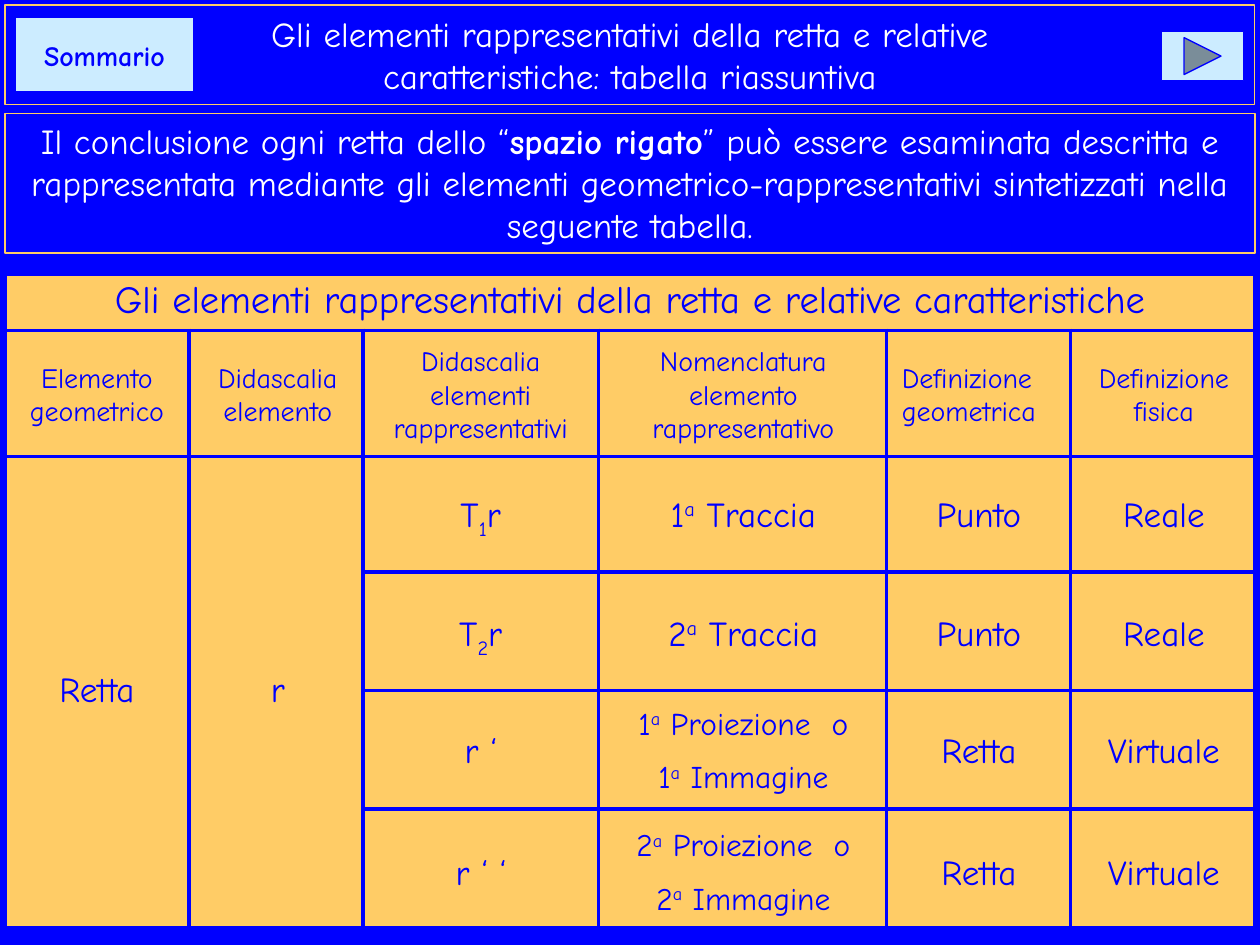
from dataclasses import dataclass
from typing import NamedTuple

import pptx
import pptx.dml.color
import pptx.enum.shapes
import pptx.enum.text
import pptx.oxml
import pptx.oxml.ns
import pptx.util

Pt = pptx.util.Pt
RGBColor = pptx.dml.color.RGBColor
MSO_SHAPE = pptx.enum.shapes.MSO_SHAPE
PP_ALIGN = pptx.enum.text.PP_ALIGN
MSO_ANCHOR = pptx.enum.text.MSO_ANCHOR
MSO_AUTO_SIZE = pptx.enum.text.MSO_AUTO_SIZE

BLUE = RGBColor(0x00, 0x00, 0xFF)
AMBER = RGBColor(0xFF, 0xCC, 0x66)
WHITE = RGBColor(0xFF, 0xFF, 0xFF)
PALE_BLUE = RGBColor(0xCC, 0xEC, 0xFF)
FONT = "Comic Neue"
LINE_HEIGHT = 1.2
INSETS = 7.2
SUPER, SUB = 30, -25


class Run(NamedTuple):
    text: str
    baseline: int = 0
    bold: bool = False


class Column(NamedTuple):
    left: float
    width: float


@dataclass
class Label:
    column: int
    middle: float
    paragraphs: list[list[Run]]
    size: float = 20
    lines: int = 1
    gap: float = 0
    align: PP_ALIGN = PP_ALIGN.CENTER


COLUMNS = [Column(4.3, 102.2), Column(110.5, 96.5), Column(209.5, 130.3),
           Column(345.6, 158.4), Column(508.3, 102.2), Column(614, 102.2)]
COLUMN_WIDTHS = [105.1, 99.4, 134.6, 164.5, 105.3, 105.3]
ROW_HEIGHTS = [31.7, 72, 66.2, 67.7, 67.7, 67.7]
HEADING_MIDDLE = 225.2
SPAN_MIDDLE = 393.5
ROW_MIDDLES = [293.4, 361.3, 428.4, 497.8]


def ordinal(number: str, noun: str) -> list[Run]:
    """Return the runs of a feminine ordinal followed by a noun."""
    return [Run(number), Run("a", SUPER), Run(f" {noun}")]


HEADINGS = [
    ([[Run("Elemento")], [Run("geometrico")]], 2),
    ([[Run("Didascalia elemento")]], 2),
    ([[Run("Didascalia elementi rappresentativi")]], 3),
    ([[Run("Nomenclatura elemento rappresentativo")]], 3),
    ([[Run("Definizione geometrica")]], 2),
    ([[Run("Definizione fisica")]], 2),
]
SYMBOLS = [[Run("T"), Run("1", SUB), Run("r")], [Run("T"), Run("2", SUB), Run("r")],
           [Run("r ‘")], [Run("r ‘ ‘")]]
GEOMETRIC = ["Punto", "Punto", "Retta", "Retta"]
PHYSICAL = ["Reale", "Reale", "Virtuale", "Virtuale"]


def write(tf, paragraphs: list[list[Run]], size: float, color: RGBColor,
          align: PP_ALIGN = PP_ALIGN.CENTER, gap: float = 0) -> None:
    """Fill a text frame with paragraphs made of runs."""
    for i, runs in enumerate(paragraphs):
        p = tf.add_paragraph() if i else tf.paragraphs[0]
        p.alignment = align
        p.space_before = Pt(gap if i else 0)
        p.font.name, p.font.size = FONT, Pt(size)
        p.font.color.rgb = color
        for run in runs:
            r = p.add_run()
            r.text = run.text
            if run.bold:
                r.font.bold = True
            if run.baseline:
                r._r.get_or_add_rPr().set("baseline", str(run.baseline * 1000))


def add_box(s, kind: MSO_SHAPE, left: float, top: float, width: float, height: float,
            line: RGBColor, weight: float, fill: RGBColor | None = None):
    """Add an outlined preset shape, filled when a colour is given."""
    sp = s.shapes.add_shape(kind, Pt(left), Pt(top), Pt(width), Pt(height))
    sp.shadow.inherit = False
    sp.line.color.rgb, sp.line.width = line, Pt(weight)
    if fill is None:
        sp.fill.background()
    else:
        sp.fill.solid()
        sp.fill.fore_color.rgb = fill
    sp.text_frame.word_wrap = True
    return sp


def add_label(s, label: Label) -> None:
    """Add a text box centred vertically on the label's middle."""
    column = COLUMNS[label.column]
    height = label.lines * label.size * LINE_HEIGHT + label.gap + INSETS
    sp = s.shapes.add_textbox(Pt(column.left), Pt(label.middle - height / 2),
                              Pt(column.width), Pt(height))
    tf = sp.text_frame
    tf.word_wrap = True
    tf.auto_size = MSO_AUTO_SIZE.SHAPE_TO_FIT_TEXT
    write(tf, label.paragraphs, label.size, BLUE, label.align, label.gap)


def style_cell(cell) -> None:
    """Give a cell its fill and its four borders."""
    cell.fill.solid()
    cell.fill.fore_color.rgb = AMBER
    tcPr = cell._tc.get_or_add_tcPr()
    for i, side in enumerate("LRTB"):
        tcPr.insert(i, pptx.oxml.parse_xml(
            f'<a:ln{side} {pptx.oxml.ns.nsdecls("a")} w="{Pt(2.25)}">'
            f'<a:solidFill><a:srgbClr val="{BLUE}"/></a:solidFill></a:ln{side}>'))


def add_grid(s) -> None:
    """Add the table with its title row and merged cells."""
    table = s.shapes.add_table(len(ROW_HEIGHTS), len(COLUMN_WIDTHS), Pt(2.9), Pt(157),
                               Pt(sum(COLUMN_WIDTHS)), Pt(sum(ROW_HEIGHTS))).table
    table.first_row = table.horz_banding = False
    for column, width in zip(table.columns, COLUMN_WIDTHS):
        column.width = Pt(width)
    for row, height in zip(table.rows, ROW_HEIGHTS):
        row.height = Pt(height)
    for cell in table.iter_cells():
        style_cell(cell)
    table.cell(0, 0).merge(table.cell(0, 5))
    for column in (0, 1):
        table.cell(2, column).merge(table.cell(5, column))
    tf = table.cell(0, 0).text_frame
    write(tf, [[Run("Gli elementi rappresentativi della retta e relative caratteristiche")]],
          22, BLUE)
    tf.paragraphs[0].line_spacing = 0.9


def build_labels() -> list[Label]:
    """List the labels of the table, heading row first."""
    labels = [Label(i, HEADING_MIDDLE, paragraphs, 16, lines,
                    align=PP_ALIGN.LEFT if i == 4 else PP_ALIGN.CENTER)
              for i, (paragraphs, lines) in enumerate(HEADINGS)]
    labels += [Label(0, SPAN_MIDDLE, [[Run("Retta")]]), Label(1, SPAN_MIDDLE, [[Run("r")]])]
    for i, middle in enumerate(ROW_MIDDLES):
        number = "12"[i % 2]
        labels.append(Label(2, middle, [SYMBOLS[i]]))
        if i < 2:
            labels.append(Label(3, middle, [ordinal(number, "Traccia")]))
        else:
            names = [ordinal(number, "Proiezione  o"), ordinal(number, "Immagine")]
            labels.append(Label(3, middle, names, 18, 2, 9))
        labels.append(Label(4, middle, [[Run(GEOMETRIC[i])]]))
        labels.append(Label(5, middle, [[Run(PHYSICAL[i])]]))
    return labels


def main() -> None:
    """Build the slide and save it."""
    prs = pptx.Presentation()
    prs.slide_width, prs.slide_height = Pt(720), Pt(540)
    s = prs.slides.add_slide(prs.slide_layouts[6])
    s.background.fill.solid()
    s.background.fill.fore_color.rgb = BLUE

    title = add_box(s, MSO_SHAPE.RECTANGLE, 2.9, 2.9, 714.2, 56.9, AMBER, 0.75)
    title.text_frame.vertical_anchor = MSO_ANCHOR.MIDDLE
    write(title.text_frame, [[Run("Gli elementi rappresentativi della retta e relative")],
                             [Run("caratteristiche: tabella riassuntiva")]], 20, WHITE)

    intro = add_box(s, MSO_SHAPE.RECTANGLE, 2.9, 64.8, 714.2, 79.9, AMBER, 1)
    intro.text_frame.vertical_anchor = MSO_ANCHOR.TOP
    intro.text_frame.auto_size = MSO_AUTO_SIZE.SHAPE_TO_FIT_TEXT
    write(intro.text_frame, [[
        Run("Il conclusione ogni retta dello “"), Run("spazio rigato", bold=True),
        Run("” può essere esaminata descritta e rappresentata mediante gli elementi "
            "geometrico-rappresentativi sintetizzati nella seguente tabella.")]], 20, WHITE)

    add_grid(s)
    for label in build_labels():
        add_label(s, label)

    add_box(s, MSO_SHAPE.ACTION_BUTTON_FORWARD_OR_NEXT, 663.8, 18, 46.8, 28.1,
            BLUE, 0, PALE_BLUE)
    summary = add_box(s, MSO_SHAPE.ACTION_BUTTON_CUSTOM, 8.6, 10.1, 102.2, 42.5,
                      BLUE, 0, PALE_BLUE)
    summary.text_frame.vertical_anchor = MSO_ANCHOR.MIDDLE
    write(summary.text_frame, [[Run("Sommario", bold=True)]], 16, BLUE)
    prs.save("out.pptx")


if __name__ == "__main__":
    main()
